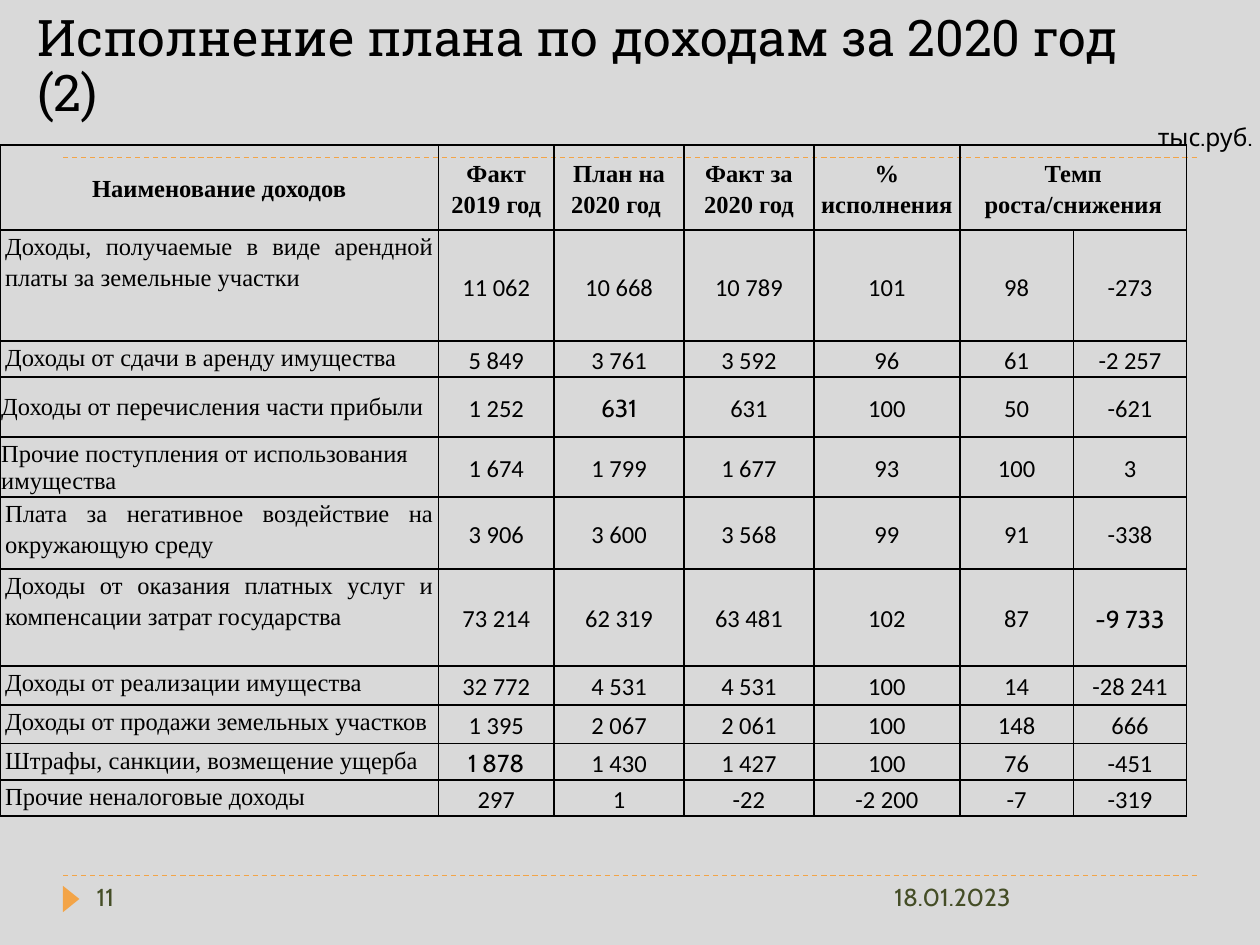
from lxml import etree
from pptx import Presentation
from pptx.dml.color import RGBColor
from pptx.enum.dml import MSO_LINE
from pptx.enum.shapes import MSO_CONNECTOR, MSO_SHAPE
from pptx.enum.text import MSO_ANCHOR, PP_ALIGN
from pptx.oxml.ns import qn
from pptx.util import Pt

LEFT, CENTER, JUSTIFY = PP_ALIGN.LEFT, PP_ALIGN.CENTER, PP_ALIGN.JUSTIFY
TOP, MIDDLE, BOTTOM = MSO_ANCHOR.TOP, MSO_ANCHOR.MIDDLE, MSO_ANCHOR.BOTTOM
DASH = MSO_LINE.DASH
STRAIGHT = MSO_CONNECTOR.STRAIGHT
TRIANGLE = MSO_SHAPE.ISOSCELES_TRIANGLE

COLORS = {"background": "D9D9D9", "accent": "F3A447", "text": "000000", "footer": "444D26"}
SERIF, SANS, NUMBERS, TITLE = "Times New Roman", "Cabin", "Calibri", "Roboto Slab"

COLUMN_WIDTHS = [250.5, 66.2, 74.2, 74.2, 83.5, 64.8, 64.8]
ROW_HEIGHTS = [48.6, 63.4, 20.6, 34.3, 34.3, 41.1, 55.4, 22.3, 22.3, 20.6, 20.6]
HEADERS = ["Наименование доходов", "Факт\n2019 год", "План на 2020 год ",
           "Факт за 2020 год", "% исполнения", "Темп роста/снижения"]
JUSTIFIED = {"alignment": JUSTIFY, "anchor": TOP, "spacing": 1.15}
LEFT_TOP = {"alignment": LEFT, "anchor": TOP, "spacing": 1.15}
COMPACT = {"alignment": LEFT, "anchor": MIDDLE, "margins": (0.7, 0.7, 0.7, 0)}
INCOME_ROWS = [
    ("Доходы, получаемые в виде арендной платы за земельные участки", JUSTIFIED,
     ["11 062", "10 668", "10 789", "101", "98", "-273"]),
    ("Доходы от сдачи в аренду имущества", JUSTIFIED,
     ["5 849", "3 761", "3 592", "96", "61", "-2 257"]),
    ("Доходы от перечисления части прибыли", COMPACT,
     ["1 252", "631", "631", "100", "50", "-621"]),
    ("Прочие поступления от использования имущества", COMPACT,
     ["1 674", "1 799", "1 677", "93", "100", "3"]),
    ("Плата за негативное воздействие на окружающую среду", JUSTIFIED,
     ["3 906", "3 600", "3 568", "99", "91", "-338"]),
    ("Доходы от оказания платных услуг и компенсации затрат государства", JUSTIFIED,
     ["73 214", "62 319", "63 481", "102", "87", "-9 733"]),
    ("Доходы от реализации имущества", LEFT_TOP,
     ["32 772", "4 531", "4 531", "100", "14", "-28 241"]),
    ("Доходы от продажи земельных участков", LEFT_TOP,
     ["1 395", "2 067", "2 061", "100", "148", "666"]),
    ("Штрафы, санкции, возмещение ущерба", JUSTIFIED,
     ["1 878", "1 430", "1 427", "100", "76", "-451"]),
    ("Прочие неналоговые доходы", JUSTIFIED,
     ["297", "1", "-22", "-2 200", "-7", "-319"]),
]
SANS_CELLS = {(3, 2), (6, 6), (9, 1)}


def write_text(frame, text, font=SANS, size=14, color="text", bold=False,
               alignment=LEFT, spacing=1.0):
    for index, line in enumerate(text.split("\n")):
        paragraph = frame.add_paragraph() if index else frame.paragraphs[0]
        paragraph.alignment = alignment
        paragraph.line_spacing = spacing
        run = paragraph.add_run()
        run.text = line
        run.font.name = font
        run.font.size = Pt(size)
        run.font.bold = bold
        run.font.color.rgb = RGBColor.from_string(COLORS[color])


class SlideBuilder:
    def __init__(self, slide):
        self.slide = slide
        fill = slide.background.fill
        fill.solid()
        fill.fore_color.rgb = RGBColor.from_string(COLORS["background"])

    def dashed_line(self, left, right, top):
        connector = self.slide.shapes.add_connector(
            STRAIGHT, Pt(left), Pt(top), Pt(right), Pt(top))
        connector.line.color.rgb = RGBColor.from_string(COLORS["accent"])
        connector.line.width = Pt(0.75)
        connector.line.dash_style = DASH
        etree.SubElement(connector._element.spPr, qn("a:effectLst"))

    def marker(self, left, top, width, height):
        shape = self.slide.shapes.add_shape(TRIANGLE, Pt(left), Pt(top), Pt(width), Pt(height))
        shape.rotation = 90
        shape.shadow.inherit = False
        shape.fill.solid()
        shape.fill.fore_color.rgb = RGBColor.from_string(COLORS["accent"])
        shape.line.fill.background()

    def text_box(self, text, left, top, width, height, anchor=TOP, **style):
        frame = self.slide.shapes.add_textbox(Pt(left), Pt(top), Pt(width), Pt(height)).text_frame
        frame.word_wrap = True
        frame.vertical_anchor = anchor
        write_text(frame, text, **style)

    def table(self, left, top, widths, heights):
        table = self.slide.shapes.add_table(
            len(heights), len(widths), Pt(left), Pt(top), Pt(sum(widths)), Pt(sum(heights))).table
        table.first_row = False
        table.horz_banding = False
        for column, width in zip(table.columns, widths):
            column.width = Pt(width)
        for row, height in zip(table.rows, heights):
            row.height = Pt(height)
        for cell in table.iter_cells():
            self.cell_borders(cell)
            cell.fill.background()
        return table

    def cell_borders(self, cell):
        properties = cell._tc.get_or_add_tcPr()
        for side in ("lnL", "lnR", "lnT", "lnB"):
            border = etree.SubElement(properties, qn(f"a:{side}"), w=str(Pt(1)))
            fill = etree.SubElement(border, qn("a:solidFill"))
            etree.SubElement(fill, qn("a:srgbClr"), val=COLORS["text"])

    def cell_text(self, cell, text, anchor=MIDDLE, margins=(2.9, 0, 2.9, 0), **style):
        cell.vertical_anchor = anchor
        cell.margin_left, cell.margin_top, cell.margin_right, cell.margin_bottom = map(Pt, margins)
        write_text(cell.text_frame, text, **style)


def main():
    presentation = Presentation()
    presentation.slide_width, presentation.slide_height = Pt(720), Pt(540)
    builder = SlideBuilder(presentation.slides.add_slide(presentation.slide_layouts[6]))

    for top in (500.4, 90):
        builder.dashed_line(36, 684, top)
    builder.marker(33.1, 509, 15.1, 9.4)
    builder.text_box("Исполнение плана по доходам за 2020 год (2)", 14.4, 12.2, 669.6, 61.2,
                     anchor=BOTTOM, font=TITLE, size=28.8, spacing=0.9)
    builder.text_box("18.01.2023", 504, 500.4, 180, 28.8, color="footer")
    builder.text_box("11", 48.2, 500.4, 156, 28.8, color="footer")
    builder.text_box("тыс.руб.", 654.5, 66.2, 102.2, 24.5)

    table = builder.table(0, 82.8, COLUMN_WIDTHS, ROW_HEIGHTS)
    table.cell(0, 5).merge(table.cell(0, 6))
    for column, header in enumerate(HEADERS):
        builder.cell_text(table.cell(0, column), header, font=SERIF, bold=True,
                          alignment=CENTER, spacing=1.15)
    for row, (label, style, values) in enumerate(INCOME_ROWS, 1):
        builder.cell_text(table.cell(row, 0), label, font=SERIF, **style)
        for column, value in enumerate(values, 1):
            font = SANS if (row, column) in SANS_CELLS else NUMBERS
            builder.cell_text(table.cell(row, column), value, font=font,
                              alignment=CENTER, spacing=1.15)

    presentation.save("out.pptx")


if __name__ == "__main__":
    main()
